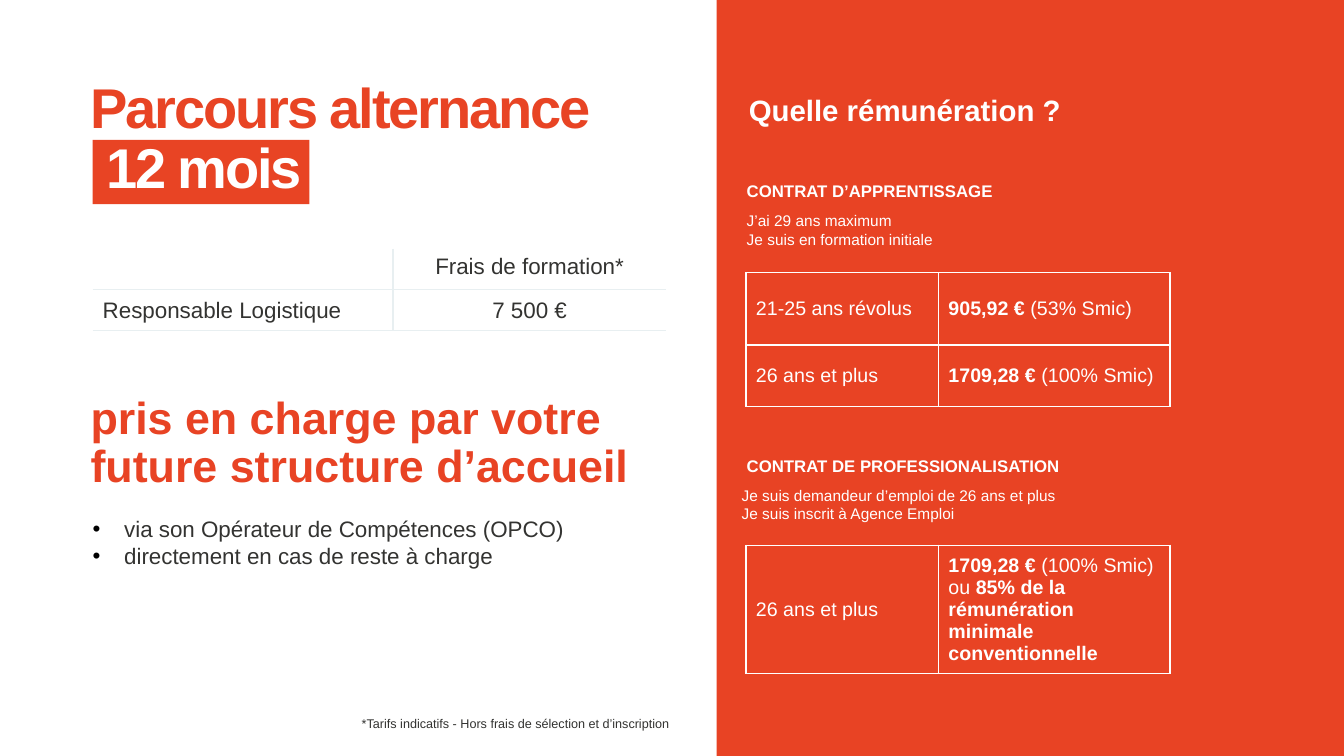
from dataclasses import dataclass

from lxml import etree
from pptx import Presentation
from pptx import util as u
from pptx.dml.color import RGBColor
from pptx.enum import shapes, text
from pptx.oxml import ns

Pt = u.Pt
ORANGE = RGBColor(0xE8, 0x43, 0x24)
BADGE_ORANGE = RGBColor(0xE8, 0x44, 0x24)
DARK = RGBColor(0x33, 0x33, 0x31)
WHITE = RGBColor(0xFF, 0xFF, 0xFF)
PALE = RGBColor(0xE8, 0xEF, 0xF1)
BLACK = RGBColor(0, 0, 0)
FONT = "Arial"
EDGES = "LRTB"
LEFT, CENTER = text.PP_ALIGN.LEFT, text.PP_ALIGN.CENTER
TOP, MIDDLE = text.MSO_ANCHOR.TOP, text.MSO_ANCHOR.MIDDLE


@dataclass
class Box:
    left: float
    top: float
    width: float
    height: float

    def lengths(self) -> list:
        return [Pt(v) for v in (self.left, self.top, self.width, self.height)]


@dataclass
class Run:
    text: str
    bold: bool = False
    color: RGBColor | None = None


@dataclass
class Style:
    size: float
    color: RGBColor
    line_spacing: float = 1.0
    tracking: float = 0
    align: text.PP_ALIGN = LEFT


@dataclass
class Label:
    box: Box
    style: Style
    lines: list[list[Run]]
    anchor: text.MSO_ANCHOR = TOP


@dataclass
class Grid:
    box: Box
    columns: list[float]
    rows: list[float]
    cells: list[list[list[Run]]]
    style: Style
    border: RGBColor
    full_border: bool = True


def add_panel(slide, box: Box, color: RGBColor) -> None:
    shape = slide.shapes.add_shape(shapes.MSO_SHAPE.RECTANGLE, *box.lengths())
    shape.shadow.inherit = False
    shape.fill.solid()
    shape.fill.fore_color.rgb = color
    shape.line.fill.background()


def write_runs(paragraph, runs: list[Run], style: Style) -> None:
    paragraph.alignment = style.align
    paragraph.line_spacing = style.line_spacing
    paragraph.space_before = Pt(0)
    for item in runs:
        run = paragraph.add_run()
        run.text = item.text
        run.font.name = FONT
        run.font.size = Pt(style.size)
        run.font.bold = item.bold
        run.font.color.rgb = item.color or style.color
        if style.tracking:
            run._r.get_or_add_rPr().set("spc", str(round(style.tracking * 100)))


def place(shape, box: Box, anchor: text.MSO_ANCHOR):
    shape.left, shape.top, shape.width, shape.height = box.lengths()
    frame = shape.text_frame
    frame.word_wrap = True
    frame.auto_size = text.MSO_AUTO_SIZE.NONE
    frame.vertical_anchor = anchor
    return frame


def write_label(shape, label: Label) -> None:
    paragraph = place(shape, label.box, label.anchor).paragraphs[0]
    for index, runs in enumerate(label.lines):
        if index:
            paragraph.add_line_break()
        write_runs(paragraph, runs, label.style)


def write_bullets(shape, box: Box, items: list[str], style: Style) -> None:
    frame = place(shape, box, TOP)
    for index, item in enumerate(items):
        paragraph = frame.add_paragraph() if index else frame.paragraphs[0]
        write_runs(paragraph, [Run(item)], style)
        properties = paragraph._p.get_or_add_pPr()
        properties.set("marL", str(Pt(22.5)))
        properties.set("indent", str(-Pt(22.5)))
        color = etree.SubElement(properties, ns.qn("a:buClr"))
        etree.SubElement(color, ns.qn("a:srgbClr"), val=str(BLACK))
        etree.SubElement(properties, ns.qn("a:buFont"), typeface=FONT)
        etree.SubElement(properties, ns.qn("a:buChar"), char="•")


def set_borders(cell, color: RGBColor, visible: str) -> None:
    properties = cell._tc.get_or_add_tcPr()
    for edge in EDGES:
        line = etree.SubElement(properties, ns.qn(f"a:ln{edge}"), w=str(Pt(1)))
        if edge in visible:
            fill = etree.SubElement(line, ns.qn("a:solidFill"))
            etree.SubElement(fill, ns.qn("a:srgbClr"), val=str(color))
        else:
            etree.SubElement(line, ns.qn("a:noFill"))


def add_grid(slide, grid: Grid) -> None:
    row_count, column_count = len(grid.rows), len(grid.columns)
    table = slide.shapes.add_table(row_count, column_count, *grid.box.lengths()).table
    table.first_row = table.horz_banding = False
    for column, width in zip(table.columns, grid.columns):
        column.width = Pt(width)
    for r, height in enumerate(grid.rows):
        table.rows[r].height = Pt(height)
        for c in range(column_count):
            cell = table.cell(r, c)
            # Open grids only have inner verticals and a line under each row
            inner = "B" + "T" * (r > 0) + "L" * (c > 0) + "R" * (c < column_count - 1)
            set_borders(cell, grid.border, EDGES if grid.full_border else inner)
            cell.fill.background()
            cell.vertical_anchor = TOP if not grid.full_border and r == 0 else MIDDLE
            paragraph = cell.text_frame.paragraphs[0]
            write_runs(paragraph, grid.cells[r][c], grid.style)
            if not grid.full_border and c > 0:
                paragraph.alignment = CENTER


SECTION = Style(12, WHITE)
DETAIL = Style(11, WHITE)
PAY = Style(14, WHITE)
BODY = Style(16, DARK)
PAY_COLUMNS = [137.5, 165.5]

TITLE = Label(
    Box(57.6, 53.3, 465, 113.8), Style(40, BADGE_ORANGE, 0.9, -1.5),
    [[Run("Parcours alternance", True)],
     [Run(" ", True), Run("12 mois", True, WHITE)]])

LABELS = [
    Label(Box(251.3, 507.6, 245.5, 18), Style(9, DARK),
          [[Run("*Tarifs indicatifs - Hors frais de sélection et d’inscription")]]),
    Label(Box(527.8, 62.6, 417.6, 78.5), Style(21, WHITE),
          [[Run("Quelle rémunération ?", True)]]),
    Label(Box(57.6, 265, 418.3, 104.4), Style(32, ORANGE, 0.9),
          [[Run("pris en charge par votre future structure d’accueil", True)]], MIDDLE),
    Label(Box(526.3, 125.3, 210.2, 21.6), SECTION,
          [[Run("CONTRAT D’APPRENTISSAGE", True)]]),
    Label(Box(526.3, 147.6, 188.6, 33.8), DETAIL,
          [[Run("J’ai 29 ans maximum")], [Run("Je suis en formation initiale")]]),
    Label(Box(526.3, 321.8, 244, 21.6), SECTION,
          [[Run("CONTRAT DE PROFESSIONALISATION", True)]]),
    Label(Box(522.7, 343.4, 350.6, 33.8), DETAIL,
          [[Run("Je suis demandeur d’emploi de 26 ans et plus")],
           [Run("Je suis inscrit à Agence Emploi")]]),
]

GRIDS = [
    Grid(Box(66.2, 177.8, 409.7, 58.6), [214.6, 195.1], [29.3, 29.3],
         [[[], [Run("Frais de formation*")]],
          [[Run("Responsable Logistique")], [Run("7 500 €")]]],
         BODY, PALE, full_border=False),
    Grid(Box(532.8, 194.8, 303, 95.6), PAY_COLUMNS, [51.6, 44],
         [[[Run("21-25 ans révolus")], [Run("905,92 € ", True), Run("(53% Smic)")]],
          [[Run("26 ans et plus")], [Run("1709,28 € ", True), Run("(100% Smic)")]]],
         PAY, WHITE),
    Grid(Box(532.8, 389.5, 303, 91.5), PAY_COLUMNS, [91.5],
         [[[Run("26 ans et plus")],
           [Run("1709,28 € ", True), Run("(100% Smic) ou "),
            Run("85% de la rémunération minimale conventionnelle", True)]]],
         PAY, WHITE),
]


def main() -> None:
    presentation = Presentation()
    presentation.slide_width, presentation.slide_height = Pt(960), Pt(540)
    slide = presentation.slides.add_slide(presentation.slide_layouts[1])
    title, body = slide.placeholders

    # Coloured panel and title badge, behind the placeholders
    add_panel(slide, Box(512, 0, 448, 540), ORANGE)
    add_panel(slide, Box(66.2, 100, 154.8, 45.8), BADGE_ORANGE)
    for placeholder in (title, body):
        slide.shapes._spTree.append(placeholder._element)

    # Title and list
    write_label(title, TITLE)
    write_bullets(body, Box(59, 364.3, 391, 46),
                  ["via son Opérateur de Compétences (OPCO)",
                   "directement en cas de reste à charge"], BODY)

    # Other texts and tables
    for label in LABELS:
        write_label(slide.shapes.add_textbox(*label.box.lengths()), label)
    for grid in GRIDS:
        add_grid(slide, grid)

    presentation.save("out.pptx")


if __name__ == "__main__":
    main()
